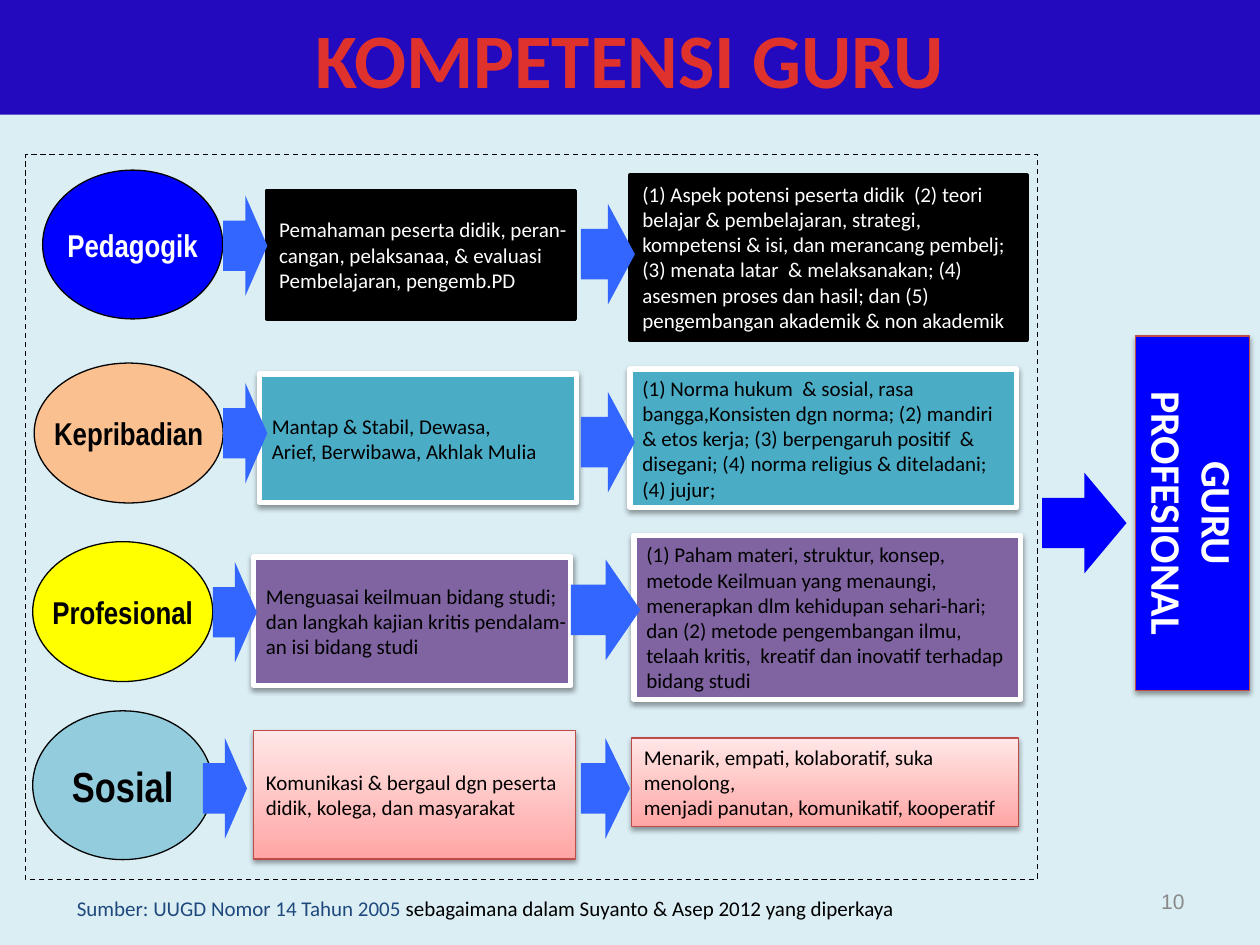
from lxml import etree
from pptx import Presentation
from pptx.dml.color import RGBColor
from pptx.enum.dml import MSO_LINE
from pptx.enum.shapes import MSO_SHAPE
from pptx.enum.text import MSO_ANCHOR, PP_ALIGN
from pptx.oxml.ns import qn
from pptx.util import Cm, Pt

BLACK = RGBColor(0x00, 0x00, 0x00)
WHITE = RGBColor(0xFF, 0xFF, 0xFF)
PALE_BLUE = RGBColor(0xDB, 0xEE, 0xF4)
INDIGO = RGBColor(0x24, 0x0A, 0xBE)
RED = RGBColor(0xE0, 0x32, 0x2D)
BLUE = RGBColor(0x00, 0x00, 0xFF)
ARROW_BLUE = RGBColor(0x33, 0x66, 0xFF)
ORANGE = RGBColor(0xFA, 0xC0, 0x90)
YELLOW = RGBColor(0xFF, 0xFF, 0x00)
SKY = RGBColor(0x93, 0xCD, 0xDD)
TEAL = RGBColor(0x4B, 0xAC, 0xC6)
PURPLE = RGBColor(0x80, 0x64, 0xA2)
ROSE = RGBColor(0xFF, 0xA6, 0xA5)
LIGHT_ROSE = RGBColor(0xFF, 0xE7, 0xE7)
BRICK = RGBColor(0xBF, 0x4C, 0x48)
NAVY = RGBColor(0x1F, 0x49, 0x7D)
GRAY = RGBColor(0x89, 0x89, 0x89)


def add_box(kind, place, fill, line=None, width=0.75, shadow=False):
    """Add a preset shape; a pair of fill colours makes a gradient, bottom to top."""
    shape = slide.shapes.add_shape(kind, *[Cm(length) for length in place])
    shape.shadow.inherit = False
    if fill is None:
        shape.fill.background()
    elif isinstance(fill, list):
        shape.fill.gradient()
        shape.fill.gradient_angle = 90
        for stop, color, position in zip(shape.fill.gradient_stops, fill, (0, 1)):
            stop.color.rgb = color
            stop.position = position
    else:
        shape.fill.solid()
        shape.fill.fore_color.rgb = fill
    if line is None:
        shape.line.fill.background()
    else:
        shape.line.color.rgb = line
        shape.line.width = Pt(width)
    if shadow:
        effects = shape._element.spPr.find(qn("a:effectLst"))
        outer = etree.SubElement(effects, qn("a:outerShdw"), blurRad="40000",
                                 dist="20000", dir="5400000", rotWithShape="0")
        color = etree.SubElement(outer, qn("a:srgbClr"), val="000000")
        etree.SubElement(color, qn("a:alpha"), val="38000")
    return shape


def write(shape, text, size, color, font="Calibri", bold=False,
          align=PP_ALIGN.LEFT, anchor=MSO_ANCHOR.MIDDLE, wrap=True):
    frame = shape.text_frame
    frame.text = text
    frame.word_wrap = wrap
    frame.vertical_anchor = anchor
    for paragraph in frame.paragraphs:
        paragraph.alignment = align
        for run in paragraph.runs:
            run.font.name = font
            run.font.size = Pt(size)
            run.font.bold = bold
            run.font.color.rgb = color


presentation = Presentation()
presentation.slide_width = Cm(25.4)
presentation.slide_height = Cm(19.05)
slide = presentation.slides.add_slide(presentation.slide_layouts[5])
slide.background.fill.solid()
slide.background.fill.fore_color.rgb = PALE_BLUE

title = slide.shapes.title
title.left, title.top, title.width, title.height = Cm(0), Cm(0), Cm(25.4), Cm(2.31)
title.fill.solid()
title.fill.fore_color.rgb = INDIGO
write(title, "KOMPETENSI GURU", 44, RED, bold=True, align=PP_ALIGN.CENTER)

# Each competence: oval, summary box, detail box, and (left, top, width) of two arrows
competences = [
    dict(name="Pedagogik", oval=(0.86, 3.43, 3.63, 3), oval_fill=BLUE,
         name_size=18, name_color=WHITE,
         fill=BLACK, line=BLACK, width=2, shadow=False, color=WHITE,
         summary_place=(5.38, 3.84, 6.22, 2.59),
         summary="Pemahaman peserta didik, peran-\ncangan, pelaksanaa, & evaluasi\n"
                 "Pembelajaran, pengemb.PD",
         detail_place=(12.7, 3.53, 8, 3.33),
         detail="(1) Aspek potensi peserta didik  (2) teori belajar & pembelajaran, "
                "strategi, kompetensi & isi, dan merancang pembelj;(3) menata latar  & "
                "melaksanakan; (4) asesmen proses dan hasil; dan (5) pengembangan "
                "akademik & non akademik",
         arrows=[(4.5, 3.94, 0.89), (11.71, 4.11, 1.09)]),
    dict(name="Kepribadian", oval=(0.69, 7.32, 3.81, 2.82), oval_fill=ORANGE,
         name_size=18, name_color=BLACK,
         fill=TEAL, line=WHITE, width=3, shadow=True, color=BLACK,
         summary_place=(5.23, 7.54, 6.4, 2.59),
         summary="Mantap & Stabil, Dewasa,\nArief, Berwibawa, Akhlak Mulia",
         detail_place=(12.7, 7.44, 7.8, 2.79),
         detail="(1) Norma hukum  & sosial, rasa bangga,Konsisten dgn norma; (2) mandiri "
                "& etos kerja; (3) berpengaruh positif  & disegani; (4) norma religius & "
                "diteladani; (4) jujur;",
         arrows=[(4.5, 7.72, 0.89), (11.71, 7.9, 1.09)]),
    dict(name="Profesional", oval=(0.66, 10.92, 3.63, 2.82), oval_fill=YELLOW,
         name_size=18, name_color=BLACK,
         fill=PURPLE, line=WHITE, width=3, shadow=True, color=BLACK,
         summary_place=(5.11, 11.23, 6.4, 2.59),
         summary="Menguasai keilmuan bidang studi;\ndan langkah kajian kritis pendalam-\n"
                 "an isi bidang studi",
         detail_place=(12.78, 10.8, 7.8, 3.3),
         detail="(1) Paham materi, struktur, konsep, metode Keilmuan yang menaungi, "
                "menerapkan dlm kehidupan sehari-hari; dan (2) metode pengembangan ilmu, "
                "telaah kritis,  kreatif dan inovatif terhadap bidang studi",
         arrows=[(4.29, 11.33, 0.89), (11.51, 11.28, 1.4)]),
    dict(name="Sosial", oval=(0.66, 14.33, 3.63, 3), oval_fill=SKY,
         name_size=24, name_color=BLACK,
         fill=[ROSE, LIGHT_ROSE], line=BRICK, width=0.75, shadow=True, color=BLACK,
         summary_place=(5.11, 14.73, 6.5, 2.59),
         summary="Komunikasi & bergaul dgn peserta\ndidik, kolega, dan masyarakat",
         detail_place=(12.73, 14.88, 7.8, 1.78),
         detail="Menarik, empati, kolaboratif, suka menolong,\n"
                "menjadi panutan, komunikatif, kooperatif",
         arrows=[(4.09, 14.88, 0.89), (11.71, 14.88, 0.99)]),
]
ARROW_HEIGHT = 2.03

for row in competences:
    oval = add_box(MSO_SHAPE.OVAL, row["oval"], row["oval_fill"], BLACK)
    write(oval, row["name"], row["name_size"], row["name_color"], "Arial Narrow",
          bold=True, align=PP_ALIGN.CENTER, wrap=False)
    style = (row["fill"], row["line"], row["width"], row["shadow"])
    summary = add_box(MSO_SHAPE.RECTANGLE, row["summary_place"], *style)
    write(summary, row["summary"], 12, row["color"], wrap=False)
    detail = add_box(MSO_SHAPE.RECTANGLE, row["detail_place"], *style)
    write(detail, row["detail"], 12, row["color"], anchor=MSO_ANCHOR.TOP)
    for arrow in row["arrows"]:
        add_box(MSO_SHAPE.RIGHT_ARROW, (*arrow, ARROW_HEIGHT), ARROW_BLUE)

frame_box = add_box(MSO_SHAPE.RECTANGLE, (0.51, 3.12, 20.4, 14.61), None, BLACK)
frame_box.line.dash_style = MSO_LINE.DASH

add_box(MSO_SHAPE.RIGHT_ARROW, (21.01, 9.53, 1.7, ARROW_HEIGHT), BLUE)
result = add_box(MSO_SHAPE.RECTANGLE, (20.47, 9.19, 7.14, 2.31), BLUE, BRICK, shadow=True)
result.rotation = 90
write(result, "GURU PROFESIONAL", 24, WHITE, bold=True, align=PP_ALIGN.CENTER,
      anchor=MSO_ANCHOR.TOP)

source = slide.shapes.add_textbox(Cm(1.3), Cm(17.93), Cm(17.09), Cm(0.76))
write(source, "Sumber: UUGD Nomor 14 Tahun 2005 ", 12, NAVY,
      anchor=MSO_ANCHOR.TOP, wrap=False)
addition = source.text_frame.paragraphs[0].add_run()
addition.text = "sebagaimana dalam Suyanto & Asep 2012 yang diperkaya"
addition.font.name = "Calibri"
addition.font.size = Pt(12)
addition.font.color.rgb = BLACK

page_number = slide.shapes.add_textbox(Cm(18.21), Cm(17.65), Cm(5.92), Cm(1.02))
write(page_number, "10", 12, GRAY, "Arial", align=PP_ALIGN.RIGHT)

presentation.save("out.pptx")
